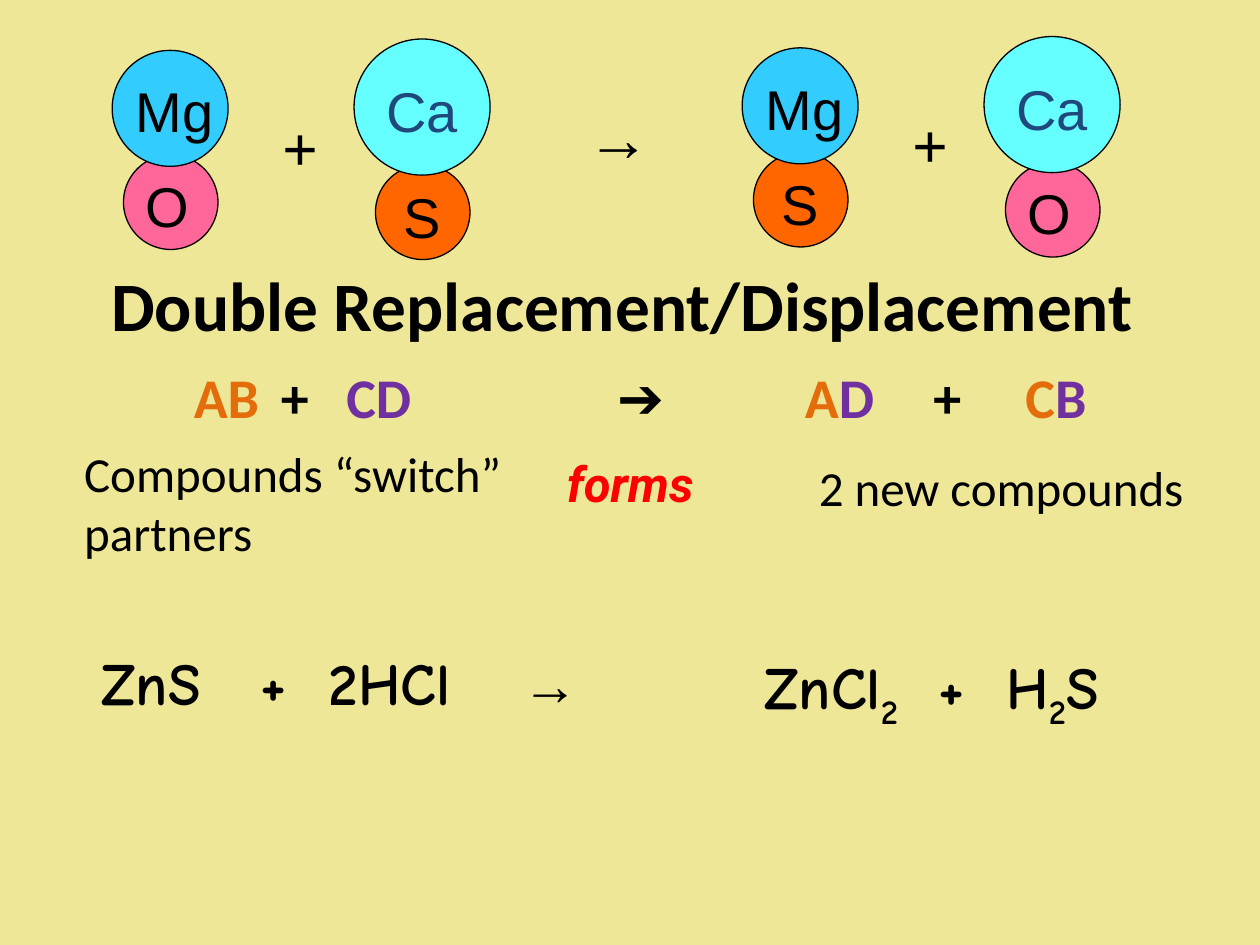
from dataclasses import dataclass

from lxml import etree
from pptx import Presentation
from pptx.dml.color import RGBColor
from pptx.enum.shapes import MSO_SHAPE
from pptx.enum.text import MSO_ANCHOR, PP_ALIGN
from pptx.oxml.ns import qn
from pptx.util import Inches, Pt

OVAL = MSO_SHAPE.OVAL
MIDDLE, TOP = MSO_ANCHOR.MIDDLE, MSO_ANCHOR.TOP
LEFT, CENTER = PP_ALIGN.LEFT, PP_ALIGN.CENTER

COLORS = {
    "background": "EDE797",
    "black": "000000",
    "navy": "1F497D",
    "red": "FF0000",
    "orange": "E46C0A",
    "purple": "7030A0",
    "magnesium": "33CCFF",
    "calcium": "66FFFF",
    "oxygen": "FF6699",
    "sulfur": "FF6600",
}


@dataclass(frozen=True)
class Style:
    size: float
    font: str
    color: str = "black"
    bold: bool = False
    italic: bool = False


@dataclass(frozen=True)
class Area:
    left: float
    top: float
    width: float
    height: float


@dataclass(frozen=True)
class Span:
    text: str
    style: Style
    subscript: bool = False


@dataclass(frozen=True)
class Atom:
    symbol: str
    fill: str
    diameter: float
    label_left: float
    label_top: float
    label_width: float
    align: PP_ALIGN = LEFT
    color: str = "black"


ATOMS = {
    "Mg": Atom("Mg", "magnesium", 0.92, 0.09, 0.16, 0.83),
    "Ca": Atom("Ca", "calcium", 1.08, 0, 0.25, 1.08, CENTER, "navy"),
    "O": Atom("O", "oxygen", 0.75, 0.08, 0.08, 0.83),
    "S": Atom("S", "sulfur", 0.75, 0.08, 0.09, 0.58, CENTER),
}

SIGN = Style(36, "Times New Roman", bold=True)
HEADING = Style(39.6, "Calibri", bold=True)
BODY = Style(28, "Calibri")
FORMS = Style(28, "Roboto", "red", bold=True, italic=True)
FORMULA = Style(34, "Comic Neue", bold=True)
ARROW = Style(32, "Arial")
BLACK, ORANGE, PURPLE = (
    Style(32, "Calibri", color, bold=True) for color in ("black", "orange", "purple")
)


def rgb(name: str) -> RGBColor:
    return RGBColor.from_string(COLORS[name])


def format_span(span, style: Style) -> None:
    font = span.font
    font.size = Pt(style.size)
    font.name = style.font
    font.bold = style.bold
    font.italic = style.italic
    font.color.rgb = rgb(style.color)


def add_box(shapes, area: Area, anchor: MSO_ANCHOR = TOP):
    box = shapes.add_textbox(
        Inches(area.left), Inches(area.top), Inches(area.width), Inches(area.height)
    )
    box.text_frame.word_wrap = True
    box.text_frame.vertical_anchor = anchor
    return box.text_frame


def add_label(shapes, area: Area, text: str, style: Style,
              align: PP_ALIGN = LEFT, anchor: MSO_ANCHOR = TOP) -> None:
    frame = add_box(shapes, area, anchor)
    frame.text = text
    for para in frame.paragraphs:
        para.alignment = align
        for span in para.runs:
            format_span(span, style)


def add_equation(shapes, area: Area, stops: list[float], parts: list[Span]) -> None:
    para = add_box(shapes, area).paragraphs[0]
    tabs = etree.SubElement(para._p.get_or_add_pPr(), qn("a:tabLst"))
    for stop in stops:
        etree.SubElement(tabs, qn("a:tab"), pos=str(Inches(stop)), algn="l")
    for part in parts:
        span = para.add_run()
        span.text = part.text
        format_span(span, part.style)
        if part.subscript:
            span._r.get_or_add_rPr().set("baseline", "-25000")


def add_atom(shapes, atom: Atom, left: float, top: float) -> None:
    size = Inches(atom.diameter)
    circle = shapes.add_shape(OVAL, Inches(left), Inches(top), size, size)
    circle.shadow.inherit = False
    circle.fill.solid()
    circle.fill.fore_color.rgb = rgb(atom.fill)
    circle.line.color.rgb = rgb("black")
    circle.line.width = Pt(0.75)
    area = Area(left + atom.label_left, top + atom.label_top, atom.label_width, 0.63)
    add_label(shapes, area, atom.symbol, Style(32, "Arial", atom.color), atom.align)


def add_compound_pair(slide, left: float, top: float,
                      magnesium_partner: str, calcium_partner: str) -> None:
    shapes = slide.shapes.add_group_shape().shapes
    add_atom(shapes, ATOMS[calcium_partner], left + 2.09, top + 1)
    add_atom(shapes, ATOMS[magnesium_partner], left + 0.09, top + 0.92)
    add_atom(shapes, ATOMS["Mg"], left, top + 0.09)
    add_atom(shapes, ATOMS["Ca"], left + 1.92, top)
    add_label(shapes, Area(left + 1.25, top + 0.5, 0.5, 0.7), "+", SIGN)


def main() -> None:
    deck = Presentation()
    deck.slide_width, deck.slide_height = Inches(10), Inches(7.5)
    slide = deck.slides.add_slide(deck.slide_layouts[6])
    slide.background.fill.solid()
    slide.background.fill.fore_color.rgb = rgb("background")
    shapes = slide.shapes

    add_label(shapes, Area(0.44, 2, 9, 0.83), "Double Replacement/Displacement",
              HEADING, CENTER, MIDDLE)
    add_equation(
        shapes, Area(0.44, 2.83, 9, 0.92), [1, 1.69, 2.21, 4.36, 5.85, 6.87, 7.6],
        [Span("\tAB", ORANGE), Span("\t+", BLACK), Span("\tCD", PURPLE),
         Span("\t➔", BLACK), Span("\tA", ORANGE), Span("D", PURPLE),
         Span("\t+", BLACK), Span("\tC", ORANGE), Span("B", PURPLE)],
    )

    add_compound_pair(slide, 0.89, 0.31, "O", "S")
    add_label(shapes, Area(4.56, 0.73, 0.75, 0.7), "→", SIGN)
    add_compound_pair(slide, 5.89, 0.29, "S", "O")

    add_label(shapes, Area(0.57, 3.47, 3.64, 1.35), "Compounds “switch”\npartners", BODY)
    add_label(shapes, Area(4.4, 3.55, 1.49, 0.57), "forms", FORMS)
    add_label(shapes, Area(6.4, 3.58, 3.23, 0.57), "2 new compounds", BODY)

    add_equation(
        shapes, Area(0.71, 5.08, 4.54, 0.67), [1.26, 1.8, 3.34],
        [Span("ZnS\t+\t2HCl", FORMULA), Span("\t→", ARROW)],
    )
    add_equation(
        shapes, Area(5.97, 5.11, 3.51, 0.67), [1.38, 1.92],
        [Span("ZnCl", FORMULA), Span("2", FORMULA, True), Span("\t+\tH", FORMULA),
         Span("2", FORMULA, True), Span("S", FORMULA)],
    )
    deck.save("out.pptx")


if __name__ == "__main__":
    main()
